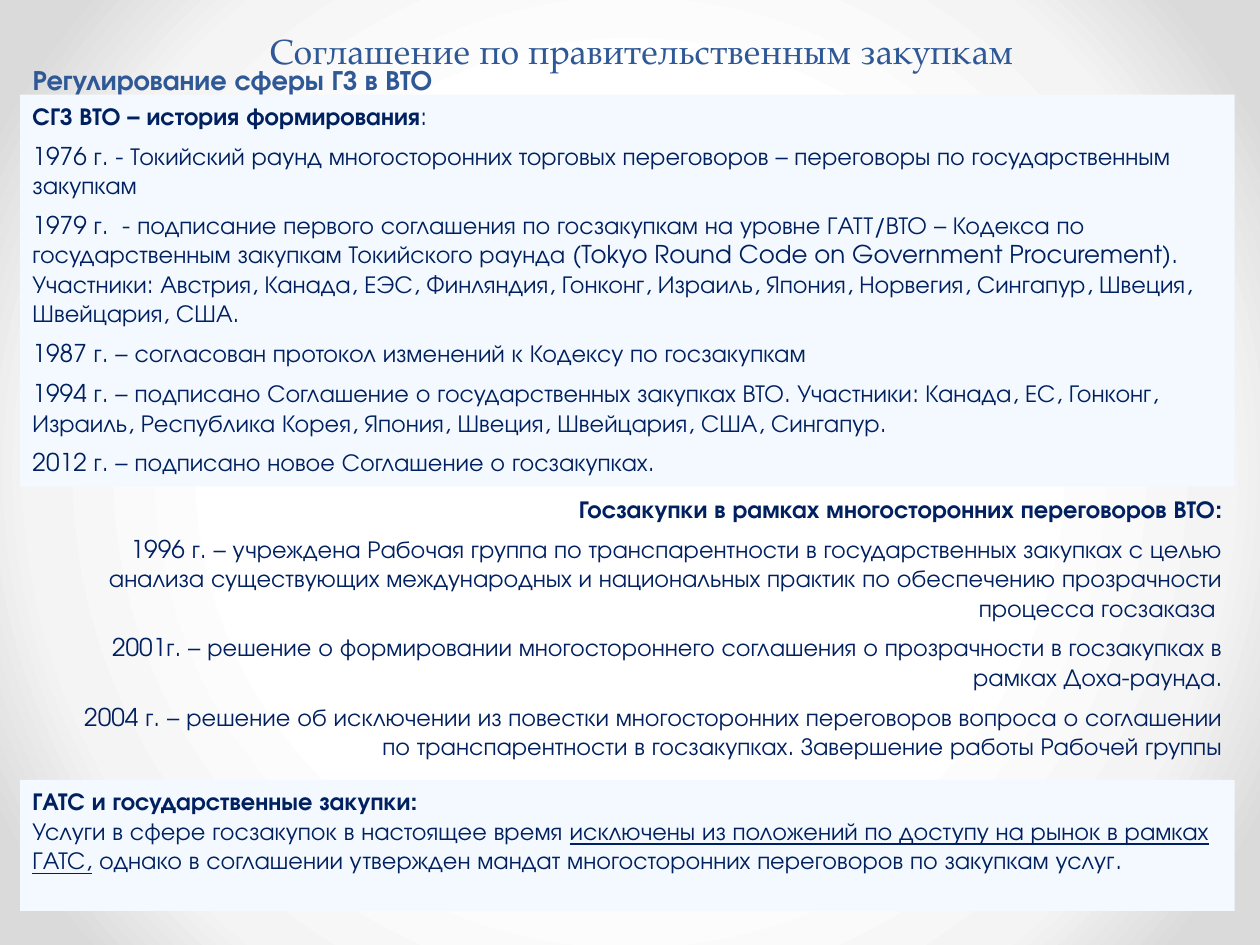
from lxml.etree import SubElement
from pptx import Presentation
from pptx.dml.color import RGBColor
from pptx.enum.shapes import MSO_SHAPE
from pptx.enum.text import MSO_ANCHOR, MSO_AUTO_SIZE, PP_ALIGN
from pptx.oxml.ns import qn
from pptx.util import Inches, Pt

COLORS = {"heading": "2F5897", "body": "002060", "panel": "F3F9FF"}
BACKDROP = [(50, "FFFFFF"), (76, "F4F4F4"), (92, "DADADA")]
SANS, SERIF = "TeX Gyre Adventor", "TeX Gyre Pagella"

TOPIC = "Соглашение по правительственным закупкам"
SECTION = "Регулирование сферы ГЗ в ВТО"

GATS = [
    [("ГАТС и государственные закупки:", "b")],
    [("Услуги в сфере госзакупок в настоящее время ", ""),
     ("исключены из положений по доступу на рынок в рамках ГАТС,", "u"),
     (" однако в соглашении утвержден мандат многосторонних переговоров по закупкам услуг.", "")],
]
HISTORY = [
    [("СГЗ ВТО – история формирования", "b"), (":", "")],
    [("1976 г. - Токийский раунд многосторонних торговых переговоров – переговоры по "
      "государственным закупкам", "")],
    [("1979 г.  - подписание первого соглашения по госзакупкам на уровне ГАТТ/ВТО – Кодекса по "
      "государственным закупкам Токийского раунда (Tokyo Round Code on Government Procurement). "
      "Участники: Австрия, Канада, ЕЭС, Финляндия, Гонконг, Израиль, Япония, Норвегия, Сингапур, "
      "Швеция, Швейцария, США.", "")],
    [("1987 г. – согласован протокол изменений к Кодексу по госзакупкам", "")],
    [("1994 г. – подписано Соглашение о государственных закупках ВТО. Участники: Канада, ЕС, "
      "Гонконг, Израиль, Республика Корея, Япония, Швеция, Швейцария, США, Сингапур.", "")],
    [("2012 г. – подписано новое Соглашение о госзакупках.", "")],
]
NEGOTIATIONS = [
    [("Госзакупки в рамках многосторонних переговоров ВТО:", "b")],
    [("1996 г. – учреждена Рабочая группа по транспарентности в государственных закупках с целью "
      "анализа существующих международных и национальных практик по обеспечению прозрачности "
      "процесса госзаказа ", "")],
    [("2001г. – решение о формировании многостороннего соглашения о прозрачности в госзакупках "
      "в рамках Доха-раунда.", "")],
    [("2004 г. – решение об исключении из повестки многосторонних переговоров вопроса о "
      "соглашении по транспарентности в госзакупках. Завершение работы Рабочей группы", "")],
]


def paint_backdrop(slide):
    slide.background.fill.gradient()
    gradient = next(slide.element.iter(qn("a:gradFill")))
    for child in list(gradient):
        gradient.remove(child)
    stops = SubElement(gradient, qn("a:gsLst"))
    for position, color in BACKDROP:
        stop = SubElement(stops, qn("a:gs"), pos=str(position * 1000))
        SubElement(stop, qn("a:srgbClr"), val=color)
    circle = SubElement(gradient, qn("a:path"))
    circle.set("path", "circle")
    SubElement(circle, qn("a:fillToRect"), {side: "50000" for side in "ltrb"})


def style(run, size, face, color, marks=""):
    run.font.size = Pt(size)
    run.font.name = face
    run.font.color.rgb = RGBColor.from_string(COLORS[color])
    run.font.bold = "b" in marks
    run.font.underline = "u" in marks


def write_heading(shape, text, size, face, align, marks=""):
    frame = shape.text_frame
    frame.text = text
    frame.word_wrap = True
    frame.auto_size = MSO_AUTO_SIZE.NONE
    frame.vertical_anchor = MSO_ANCHOR.BOTTOM
    frame.paragraphs[0].alignment = align
    style(frame.paragraphs[0].runs[0], size, face, "heading", marks)
    return frame.paragraphs[0]


def write_body(shape, paragraphs, align, gap):
    frame = shape.text_frame
    frame.word_wrap = True
    frame.vertical_anchor = MSO_ANCHOR.TOP
    for index, parts in enumerate(paragraphs):
        paragraph = frame.add_paragraph() if index else frame.paragraphs[0]
        paragraph.alignment = align
        paragraph.space_before = Pt(gap if index else 0)
        for text, marks in parts:
            run = paragraph.add_run()
            run.text = text
            style(run, 14, SANS, "body", marks)


def add_panel(slide, top, height, paragraphs, gap):
    panel = slide.shapes.add_shape(
        MSO_SHAPE.RECTANGLE, Inches(0.16), Inches(top), Inches(9.64), Inches(height))
    panel.shadow.inherit = False
    panel.fill.solid()
    panel.fill.fore_color.rgb = RGBColor.from_string(COLORS["panel"])
    panel.line.fill.background()
    write_body(panel, paragraphs, PP_ALIGN.LEFT, gap)


def main():
    deck = Presentation()
    deck.slide_width, deck.slide_height = Inches(10), Inches(7.5)
    slide = deck.slides.add_slide(deck.slide_layouts[5])
    paint_backdrop(slide)

    section = slide.shapes.title
    section.left, section.top = Inches(0.16), Inches(0.48)
    section.width, section.height = Inches(9.18), Inches(0.33)
    write_heading(section, SECTION, 16, SANS, PP_ALIGN.LEFT, "b")

    add_panel(slide, 6.19, 1.04, GATS, 0)
    add_panel(slide, 0.75, 3.11, HISTORY, 6)

    negotiations = slide.shapes.add_textbox(Inches(0.3), Inches(3.87), Inches(9.5), Inches(2.24))
    write_body(negotiations, NEGOTIATIONS, PP_ALIGN.RIGHT, 6)

    topic = slide.shapes.add_textbox(Inches(0.32), Inches(0), Inches(9.54), Inches(0.62))
    write_heading(topic, TOPIC, 20, SERIF, PP_ALIGN.CENTER).line_spacing = Pt(58)

    deck.save("out.pptx")


if __name__ == "__main__":
    main()
